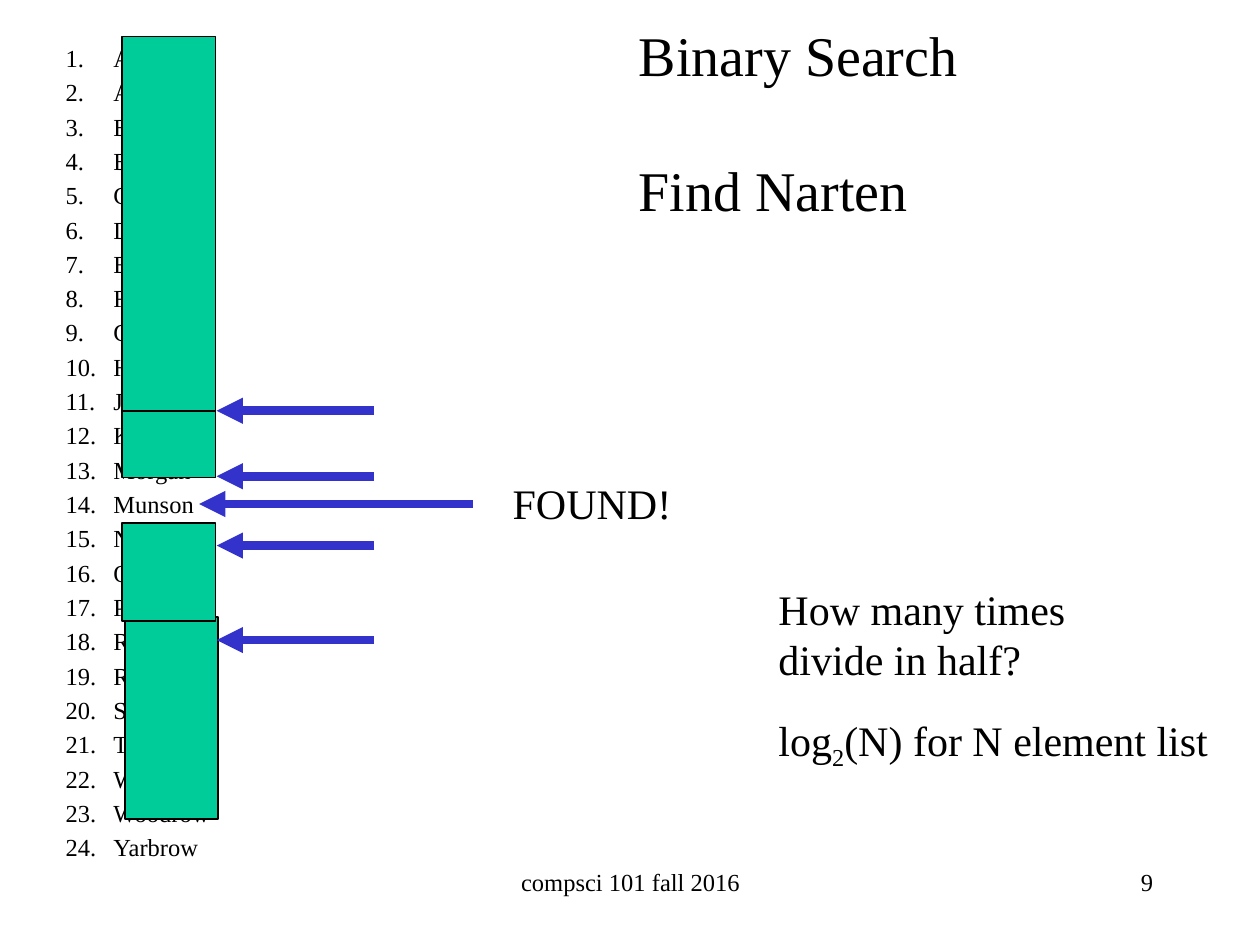
from lxml import etree
from pptx import Presentation
from pptx import util as u
from pptx.dml.color import RGBColor
from pptx.enum import shapes, text
from pptx.oxml.ns import qn

HEAD = ["Binary Search", "Find Narten"]
NAMES = [
    "Anderson", "Applegate", "Bethune", "Brooks", "Carter", "Douglas",
    "Edwards", "Franklin", "Griffin", "Holhouser", "Jefferson", "Klatchy",
    "Morgan", "Munson", "Narten", "Oliver", "Parker", "Rivers",
    "Roberts", "Stevenson", "Thomas", "Wilson", "Woodrow", "Yarbrow",
]
COVERS = [(0.97, 0.29, 3.03), (0.99, 4.9, 1.6), (0.97, 4.15, 0.78), (0.97, 3.26, 0.53)]
ARROWS = [(2.97, 1.72, y) for y in (3.26, 5.08, 4.33, 3.78)] + [(3.75, 1.58, 4)]
LEFT, MID, RIGHT = text.PP_ALIGN.LEFT, text.PP_ALIGN.CENTER, text.PP_ALIGN.RIGHT
NOTES = [
    (["FOUND!"], (3.97, 3.74, 1.48, 0.5), "note", LEFT, False),
    (["compsci 101 fall 2016"], (3.42, 6.83, 3.17, 0.5), "small", MID, True),
    (["9"], (7.17, 6.83, 2.08, 0.5), "small", RIGHT, True),
    (["How many times", "divide in half?"], (6.08, 4.58, 2.58, 0.91), "note", LEFT, False),
]
LOG = ["log", "2", "(N) for N element list"]
LOG_BOX = (6.08, 5.62, 3.74, 0.5)
THEME = {
    "font": "Times New Roman",
    "head": 32, "note": 24, "small": 14,
    "ink": RGBColor.from_string("000000"),
    "cover": RGBColor.from_string("00CC99"),
    "arrow": RGBColor.from_string("3333CC"),
}


def place(shape, box):
    shape.left, shape.top, shape.width, shape.height = map(u.Inches, box)


def style(run, size):
    run.font.name = THEME["font"]
    run.font.size = u.Pt(THEME[size])
    run.font.color.rgb = THEME["ink"]


def write(shape, lines, size, align=LEFT, wrap=True):
    frame = shape.text_frame
    frame.text = "\n".join(lines)
    frame.word_wrap = wrap
    frame.vertical_anchor = text.MSO_ANCHOR.TOP
    frame.auto_size = text.MSO_AUTO_SIZE.NONE if wrap else text.MSO_AUTO_SIZE.SHAPE_TO_FIT_TEXT
    for para in frame.paragraphs:
        para.alignment = align
        for run in para.runs:
            style(run, size)
    return frame


def number(para):
    props = para._p.get_or_add_pPr()
    props.set("marL", str(u.Inches(0.38)))
    props.set("indent", str(u.Inches(-0.38)))
    etree.SubElement(props, qn("a:buFont")).set("typeface", THEME["font"])
    etree.SubElement(props, qn("a:buAutoNum")).set("type", "arabicPeriod")


def cover(slide, left, top, height):
    box = map(u.Inches, (left, top, 0.74, height))
    rect = slide.shapes.add_shape(shapes.MSO_SHAPE.RECTANGLE, *box)
    rect.shadow.inherit = False
    rect.fill.solid()
    rect.fill.fore_color.rgb = THEME["cover"]
    rect.line.color.rgb = THEME["ink"]
    rect.line.width = u.Pt(1)


def arrow(slide, start, end, y):
    ends = map(u.Inches, (start, y, end, y))
    link = slide.shapes.add_connector(shapes.MSO_CONNECTOR.STRAIGHT, *ends)
    link.line.color.rgb = THEME["arrow"]
    link.line.width = u.Pt(5)
    etree.SubElement(link.line._get_or_add_ln(), qn("a:tailEnd")).set("type", "triangle")
    etree.SubElement(link._element.spPr, qn("a:effectLst"))


def main():
    deck = Presentation()
    deck.slide_width, deck.slide_height = u.Inches(10), u.Inches(7.5)
    slide = deck.slides.add_slide(deck.slide_layouts[1])
    title, body = slide.placeholders

    place(body, (0.42, 0.29, 8.65, 6.46))
    for para in write(body, NAMES, "small").paragraphs:
        number(para)

    place(title, (4.97, 0.11, 2.76, 1.72))
    frame = write(title, HEAD, "head", wrap=False)
    frame.paragraphs[1].space_before = u.Pt(39)

    for item in COVERS:
        cover(slide, *item)
    for item in ARROWS:
        arrow(slide, *item)
    for lines, box, size, align, wrap in NOTES:
        note = slide.shapes.add_textbox(*map(u.Inches, box))
        write(note, lines, size, align, wrap)

    note = slide.shapes.add_textbox(*map(u.Inches, LOG_BOX))
    para = write(note, LOG[:1], "note", wrap=False).paragraphs[0]
    for part in LOG[1:]:
        run = para.add_run()
        run.text = part
        style(run, "note")
    para.runs[1]._r.get_or_add_rPr().set("baseline", "-25000")

    deck.save("out.pptx")


if __name__ == "__main__":
    main()
